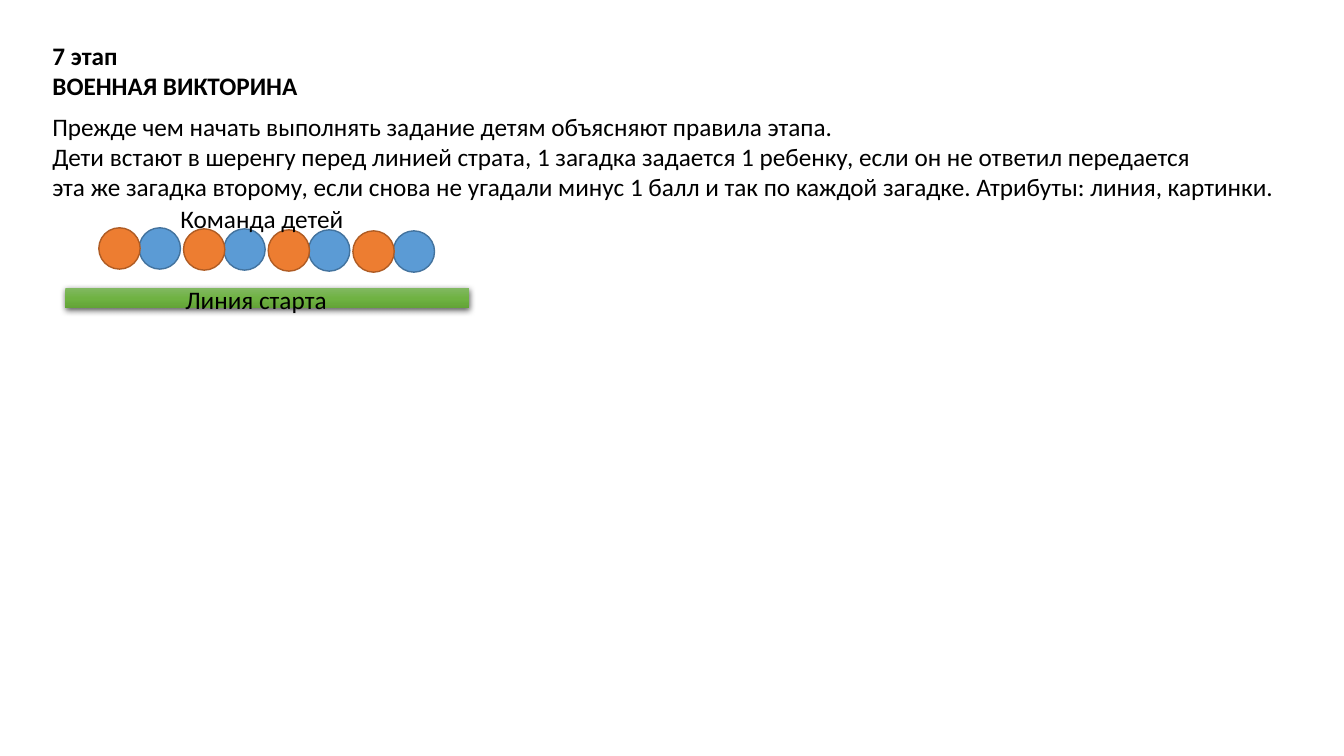
from lxml import etree
from pptx import Presentation
from pptx.dml.color import RGBColor as RGB
from pptx.enum.shapes import MSO_SHAPE as SHAPE
from pptx.enum.text import MSO_ANCHOR as ANCHOR, MSO_AUTO_SIZE as AUTO, PP_ALIGN as ALIGN
from pptx.oxml import parse_xml
from pptx.oxml.ns import nsdecls
from pptx.util import Inches, Pt

COLORS = {
    "text": "000000",
    "blue": "5B9BD5", "blue_line": "43739E",
    "orange": "ED7D31", "orange_line": "AF5C24",
    "green_top": "81B861", "green_mid": "6FB242", "green_low": "62A336",
}


def write(tf, text, size=18, bold=False, color="text", font="Calibri", wrap=True):
    """Fill a text frame, one paragraph per line of text."""
    tf.word_wrap = wrap
    tf.vertical_anchor = ANCHOR.TOP
    for i, line in enumerate(text.split("\n")):
        p = tf.paragraphs[0] if i == 0 else tf.add_paragraph()
        p.alignment = ALIGN.LEFT
        r = p.add_run()
        r.text = line
        r.font.name, r.font.size, r.font.bold = font, Pt(size), bold
        r.font.color.rgb = RGB.from_string(COLORS[color])


class Deck:
    def __init__(self, width, height):
        self.prs = Presentation()
        self.prs.slide_width, self.prs.slide_height = Inches(width), Inches(height)
        self.slide = self.prs.slides.add_slide(self.prs.slide_layouts[5])

    def title(self, text, x, y, w, h):
        sp = self.slide.shapes.title
        sp.left, sp.top, sp.width, sp.height = map(Inches, (x, y, w, h))
        write(sp.text_frame, text, bold=True)
        sp.text_frame.auto_size = AUTO.NONE

    def text(self, text, x, y, w, h, wrap=True):
        sp = self.slide.shapes.add_textbox(*map(Inches, (x, y, w, h)))
        write(sp.text_frame, text, wrap=wrap)
        sp.text_frame.auto_size = AUTO.SHAPE_TO_FIT_TEXT

    def child(self, x, y, color, size=0.41):
        sp = self.slide.shapes.add_shape(SHAPE.OVAL, *map(Inches, (x, y, size, size)))
        sp.shadow.inherit = False
        sp.fill.solid()
        sp.fill.fore_color.rgb = RGB.from_string(COLORS[color])
        sp.line.color.rgb = RGB.from_string(COLORS[color + "_line"])
        sp.line.width = Pt(1)

    def start_bar(self, x, y, w, h):
        sp = self.slide.shapes.add_shape(SHAPE.FLOWCHART_PROCESS, *map(Inches, (x, y, w, h)))
        sp.shadow.inherit = False
        sp.line.fill.background()
        # Three-stop vertical gradient
        sp.fill.gradient()
        sp.fill.gradient_angle = 270
        stops = sp._element.spPr.find(".//{*}gsLst")
        for stop in list(stops):
            stops.remove(stop)
        for pos, name in ((0, "green_top"), (50, "green_mid"), (100, "green_low")):
            stops.append(parse_xml(
                f'<a:gs {nsdecls("a")} pos="{pos * 1000}"><a:srgbClr val="{COLORS[name]}"/></a:gs>'))
        # Soft shadow below the bar
        effects = sp._element.spPr.find("{*}effectLst")
        effects.append(etree.fromstring(
            f'<a:outerShdw {nsdecls("a")} blurRad="{Pt(4.5)}" dist="{Pt(1.5)}" dir="5400000" '
            f'algn="ctr" rotWithShape="0"><a:srgbClr val="{COLORS["text"]}">'
            '<a:alpha val="63000"/></a:srgbClr></a:outerShdw>'))


def main():
    deck = Deck(13.33, 7.5)
    deck.title("7 этап\nВОЕННАЯ ВИКТОРИНА", 0.42, 0.35, 6.67, 0.71)

    # Row of children in alternating colours
    for color, left in (("blue", 1.38), ("orange", 0.98)):
        for pair in range(4):
            deck.child(left + 0.84 * pair, 2.26 + 0.01 * pair, color)

    # Start line
    deck.start_bar(0.65, 2.86, 4, 0.2)

    # Rules and labels
    deck.text(
        "Прежде чем начать выполнять задание детям объясняют правила этапа.\n"
        "Дети встают в шеренгу перед линией страта, 1 загадка задается 1 ребенку, "
        "если он не ответил передается\n"
        "эта же загадка второму, если снова не угадали минус 1 балл и так по каждой загадке. "
        "Атрибуты: линия, картинки.",
        0.42, 1.05, 12.45, 1.01, wrap=False)
    deck.text("Линия старта", 1.74, 2.77, 1.62, 0.4, wrap=False)
    deck.text("Команда детей", 1.69, 1.97, 2.42, 0.4)

    deck.prs.save("out.pptx")


if __name__ == "__main__":
    main()
